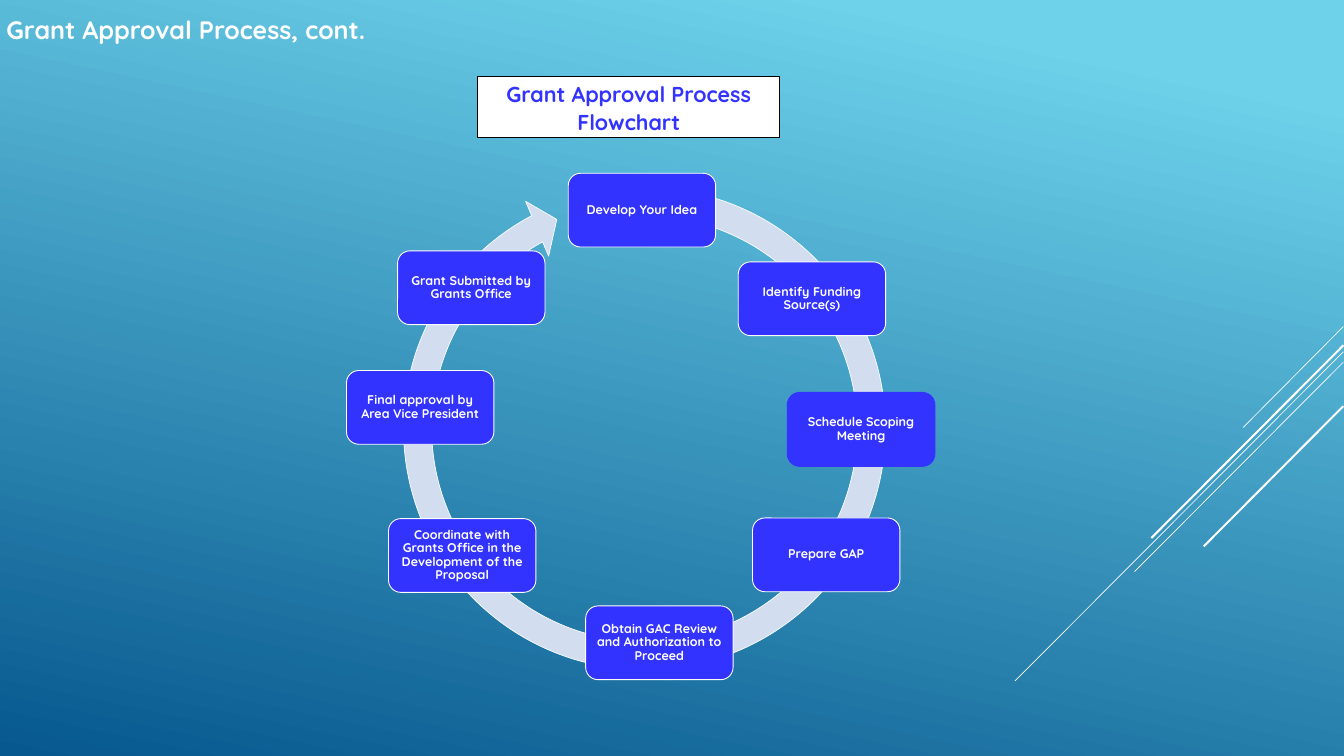
from dataclasses import dataclass

from lxml.etree import SubElement
from pptx import Presentation
from pptx.dml.color import RGBColor
from pptx.enum.shapes import MSO_CONNECTOR, MSO_SHAPE
from pptx.enum.text import MSO_ANCHOR, MSO_AUTO_SIZE, PP_ALIGN
from pptx.oxml.ns import qn
from pptx.util import Inches, Pt


@dataclass(frozen=True)
class Theme:
    font: str = "Quicksand"
    white: RGBColor = RGBColor(0xFF, 0xFF, 0xFF)
    black: RGBColor = RGBColor(0x00, 0x00, 0x00)
    blue: RGBColor = RGBColor(0x33, 0x33, 0xFF)
    ring: RGBColor = RGBColor(0xD2, 0xDE, 0xEF)
    sky: RGBColor = RGBColor(0x6E, 0xD2, 0xEB)
    deep: RGBColor = RGBColor(0x06, 0x58, 0x8E)
    title_size: int = 28
    heading_size: int = 24
    step_size: int = 14


THEME = Theme()
TITLE_ONLY = 5
SLIDE_WIDTH, SLIDE_HEIGHT = 20.79, 11.69
STEP_WIDTH, STEP_HEIGHT = 2.28, 1.14
STEP_INSET = 0.12
RAY_RIGHT = 20.78

RAYS = [
    (5.05, 19.23, 6.61, 0.75),
    (5.44, 15.7, 10.53, 0.75),
    (5.6, 17.55, 8.84, 0.75),
    (5.34, 17.81, 8.32, 2.25),
    (6.28, 18.62, 8.45, 2.25),
]

RING_ADJUSTMENTS = (0.055, 3.307, 145.054, 169.562, 0.058)

STEPS = [
    ("Develop Your Idea", 8.79, 2.68),
    ("Identify Funding Source(s)", 11.42, 4.05),
    ("Schedule Scoping Meeting", 12.18, 6.07),
    ("Prepare GAP", 11.64, 8.01),
    ("Obtain GAC Review and Authorization to Proceed", 9.06, 9.37),
    ("Coordinate with Grants Office in the Development of the Proposal", 6.01, 8.02),
    ("Final approval by Area Vice President", 5.36, 5.73),
    ("Grant Submitted by Grants Office", 6.15, 3.88),
]
CURRENT_STEP = "Schedule Scoping Meeting"


def paint_background(page):
    fill = page.background.fill
    fill.gradient()
    fill.gradient_angle = 360 - 102
    stops = ((0.1, THEME.sky), (1, THEME.deep))
    for stop, (position, color) in zip(fill.gradient_stops, stops):
        stop.position = position
        stop.color.rgb = color


def write_text(box, text, size, color, align, anchor, spacing=1.0):
    frame = box.text_frame
    frame.text = text
    frame.word_wrap = True
    frame.auto_size = MSO_AUTO_SIZE.NONE
    frame.vertical_anchor = anchor
    para = frame.paragraphs[0]
    para.alignment = align
    para.line_spacing = spacing
    span = para.runs[0]
    span.font.name = THEME.font
    span.font.size = Pt(size)
    span.font.bold = True
    span.font.color.rgb = color


def add_ray(page, top, left, bottom, weight):
    ray = page.shapes.add_connector(
        MSO_CONNECTOR.STRAIGHT,
        Inches(RAY_RIGHT), Inches(top), Inches(left), Inches(bottom),
    )
    ray.line.color.rgb = THEME.white
    ray.line.width = Pt(weight)
    SubElement(ray._element.spPr, qn("a:effectLst"))


def add_block(page, kind, bounds, fill, outline, weight):
    block = page.shapes.add_shape(kind, *map(Inches, bounds))
    block.shadow.inherit = False
    block.fill.solid()
    block.fill.fore_color.rgb = fill
    block.line.color.rgb = outline
    block.line.width = Pt(weight)
    return block


def add_title(page):
    title = page.shapes.title
    title.left, title.top = Inches(0), Inches(0.17)
    title.width, title.height = Inches(5.98), Inches(0.57)
    write_text(title, "Grant Approval Process, cont.", THEME.title_size,
               THEME.white, PP_ALIGN.LEFT, MSO_ANCHOR.TOP)


def add_heading(page):
    heading = add_block(page, MSO_SHAPE.RECTANGLE, (7.39, 1.18, 4.67, 0.95),
                        THEME.white, THEME.black, 0.75)
    write_text(heading, "Grant Approval Process Flowchart", THEME.heading_size,
               THEME.blue, PP_ALIGN.CENTER, MSO_ANCHOR.TOP, 1.07)


def add_ring(page):
    ring = add_block(page, MSO_SHAPE.CIRCULAR_ARROW, (6, 2.66, 7.94, 7.94),
                     THEME.ring, THEME.white, 0.75)
    for index, value in enumerate(RING_ADJUSTMENTS):
        ring.adjustments[index] = value


def add_step(page, text, left, top):
    outline, weight = (THEME.blue, 1.25) if text == CURRENT_STEP else (THEME.white, 1)
    step = add_block(page, MSO_SHAPE.ROUNDED_RECTANGLE,
                     (left, top, STEP_WIDTH, STEP_HEIGHT),
                     THEME.blue, outline, weight)
    frame = step.text_frame
    frame.margin_left = frame.margin_right = Inches(STEP_INSET)
    frame.margin_top = frame.margin_bottom = Inches(STEP_INSET)
    write_text(step, text, THEME.step_size, THEME.white,
               PP_ALIGN.CENTER, MSO_ANCHOR.MIDDLE, 0.9)


def main():
    deck = Presentation()
    deck.slide_width, deck.slide_height = Inches(SLIDE_WIDTH), Inches(SLIDE_HEIGHT)
    page = deck.slides.add_slide(deck.slide_layouts[TITLE_ONLY])
    paint_background(page)
    for ray in RAYS:
        add_ray(page, *ray)
    add_title(page)
    add_heading(page)
    add_ring(page)
    for step in STEPS:
        add_step(page, *step)
    deck.save("out.pptx")


if __name__ == "__main__":
    main()
